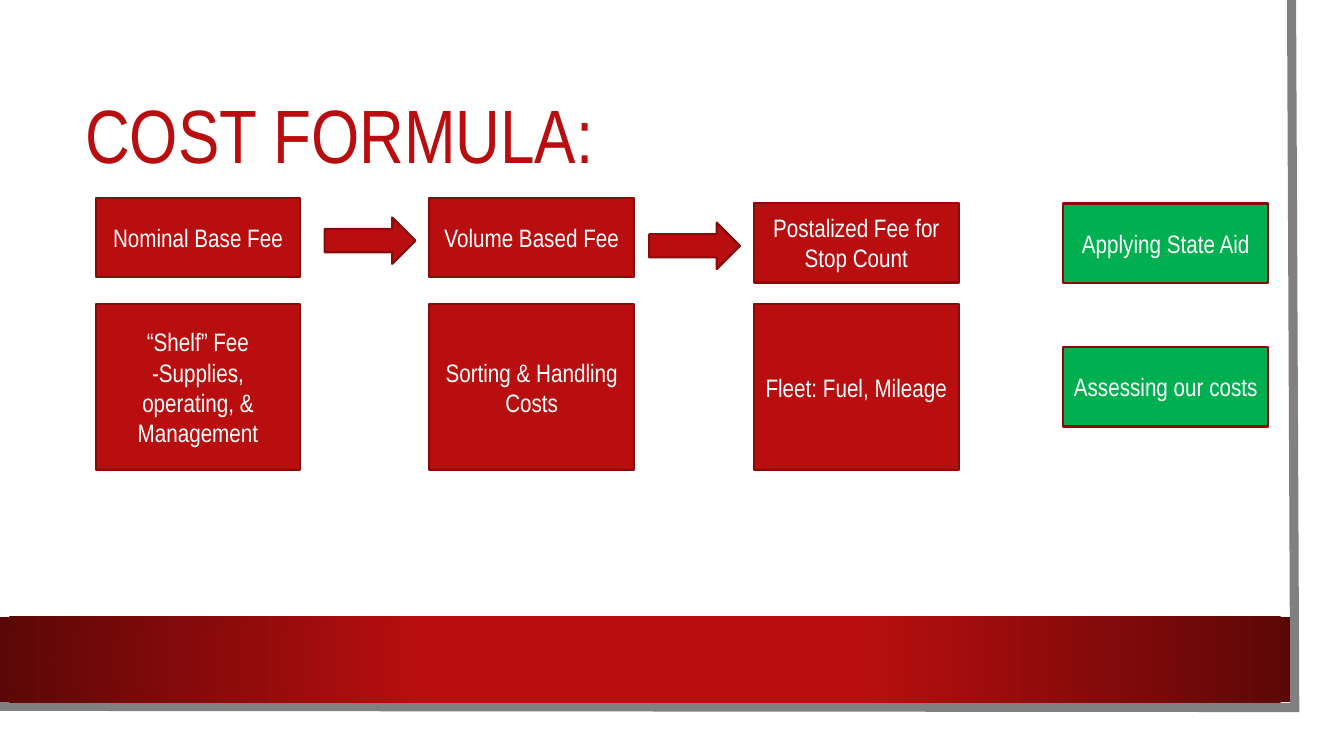
from pptx import Presentation
from pptx.dml.color import RGBColor
from pptx.enum.shapes import MSO_SHAPE
from pptx.enum.text import MSO_ANCHOR, PP_ALIGN
from pptx.oxml import parse_xml
from pptx.oxml.ns import nsdecls, qn
from pptx.util import Cm, Pt

RED = RGBColor(0xB8, 0x0E, 0x0F)
DARK = RGBColor(0x5C, 0x07, 0x07)
EDGE = RGBColor(0x88, 0x0A, 0x0B)
GREEN = RGBColor(0x00, 0xB0, 0x50)
GREY = RGBColor(0x80, 0x80, 0x80)
WHITE = RGBColor(0xFF, 0xFF, 0xFF)
FONT = "Arial Narrow"

WIDE, FLAT, TALL = 5.16, 2.01, 4.17  # box width, short and tall heights


def add_run(para, text, size, color):
    run = para.add_run()
    run.text = text
    run.font.name = FONT
    run.font.size = Pt(size)
    run.font.color.rgb = color


def add_shape(slide, kind, left, top, width, height, fill, edge=None):
    shape = slide.shapes.add_shape(
        kind, Cm(left), Cm(top), Cm(width), Cm(height))
    shape.shadow.inherit = False
    shape.fill.solid()
    shape.fill.fore_color.rgb = fill
    if edge is None:
        shape.line.fill.background()
    else:
        shape.line.color.rgb = edge
        shape.line.width = Pt(1.5)
    return shape


def add_box(slide, left, top, height, fill, lines):
    box = add_shape(slide, MSO_SHAPE.RECTANGLE, left, top, WIDE, height,
                    fill, EDGE)
    frame = box.text_frame
    frame.word_wrap = True
    frame.vertical_anchor = MSO_ANCHOR.MIDDLE
    for i, line in enumerate(lines):
        para = frame.add_paragraph() if i else frame.paragraphs[0]
        para.alignment = PP_ALIGN.CENTER
        add_run(para, line, 18, WHITE)


def add_frame(slide, left, top, width, height):
    # Sheet
    add_shape(slide, MSO_SHAPE.RECTANGLE, left, top, width + 0.63,
              height + 0.63, WHITE)

    # Grey rim along the right and bottom edges
    build = slide.shapes.build_freeform(
        Cm(left + width + 0.04), Cm(top), scale=1.0)
    build.add_line_segments(
        [(Cm(left + width + 0.12), Cm(top + height + 0.03)),
         (Cm(left - 0.08), Cm(top + height))], close=False)
    rim = build.convert_to_shape()
    rim.shadow.inherit = False
    rim.fill.background()
    rim.line.color.rgb = GREY
    rim.line.width = Pt(6.5)
    rim.line._get_or_add_ln().append(
        parse_xml(f'<a:miter {nsdecls("a")} lim="800000"/>'))

    # Band that darkens outwards from its centre
    band = add_shape(slide, MSO_SHAPE.RECTANGLE, left, top + height - 2.26,
                     width, 2.16, RED)
    band.fill.gradient()
    stops = band.fill.gradient_stops
    for stop, color, place in zip(stops, (RED, DARK), (0.34, 1)):
        stop.color.rgb = color
        stop.position = place
    grad = band.fill._xPr.find(qn("a:gradFill"))
    grad.replace(grad.find(qn("a:lin")), parse_xml(
        f'<a:path {nsdecls("a")} path="circle"><a:fillToRect l="50000" '
        't="50000" r="50000" b="50000"/></a:path>'))


def add_title(slide, left, top, width, height):
    box = slide.shapes.add_textbox(Cm(left), Cm(top), Cm(width), Cm(height))
    frame = box.text_frame
    frame.word_wrap = True
    frame.vertical_anchor = MSO_ANCHOR.MIDDLE
    para = frame.paragraphs[0]
    para.line_spacing = 0.9
    add_run(para, "COST FORMULA:", 54, RED)


def add_fees(slide, left, top):
    # Offset of each column and its fee, then the fee and what it covers
    fees = [
        (0, 0, "Nominal Base Fee",
         ["“Shelf” Fee", "-Supplies, operating, & Management"]),
        (8.41, 0, "Volume Based Fee", ["Sorting & Handling Costs"]),
        (16.59, 0.13, "Postalized Fee for Stop Count",
         ["Fleet: Fuel, Mileage"]),
    ]
    for x, y, fee, costs in fees:
        if x:
            add_shape(slide, MSO_SHAPE.RIGHT_ARROW, left + x - 2.64,
                      top + y + 0.5, 2.29, 1.17, RED, EDGE)
        add_box(slide, left + x, top + y, FLAT, RED, [fee])
        add_box(slide, left + x, top + 2.69, TALL, RED, costs)


def add_aid(slide, left, top):
    for i, text in enumerate(["Applying State Aid", "Assessing our costs"]):
        add_box(slide, left, top + 3.61 * i, FLAT, GREEN, [text])


def main():
    deck = Presentation()
    deck.slide_width, deck.slide_height = Cm(33.87), Cm(19.05)
    slide = deck.slides.add_slide(deck.slide_layouts[6])
    add_frame(slide, 0, 0, 32.51, 17.8)
    add_title(slide, 1.9, 1.9, 28.88, 3.2)
    add_fees(slide, 2.41, 4.98)
    add_aid(slide, 26.8, 5.13)
    deck.save("out.pptx")


if __name__ == "__main__":
    main()
